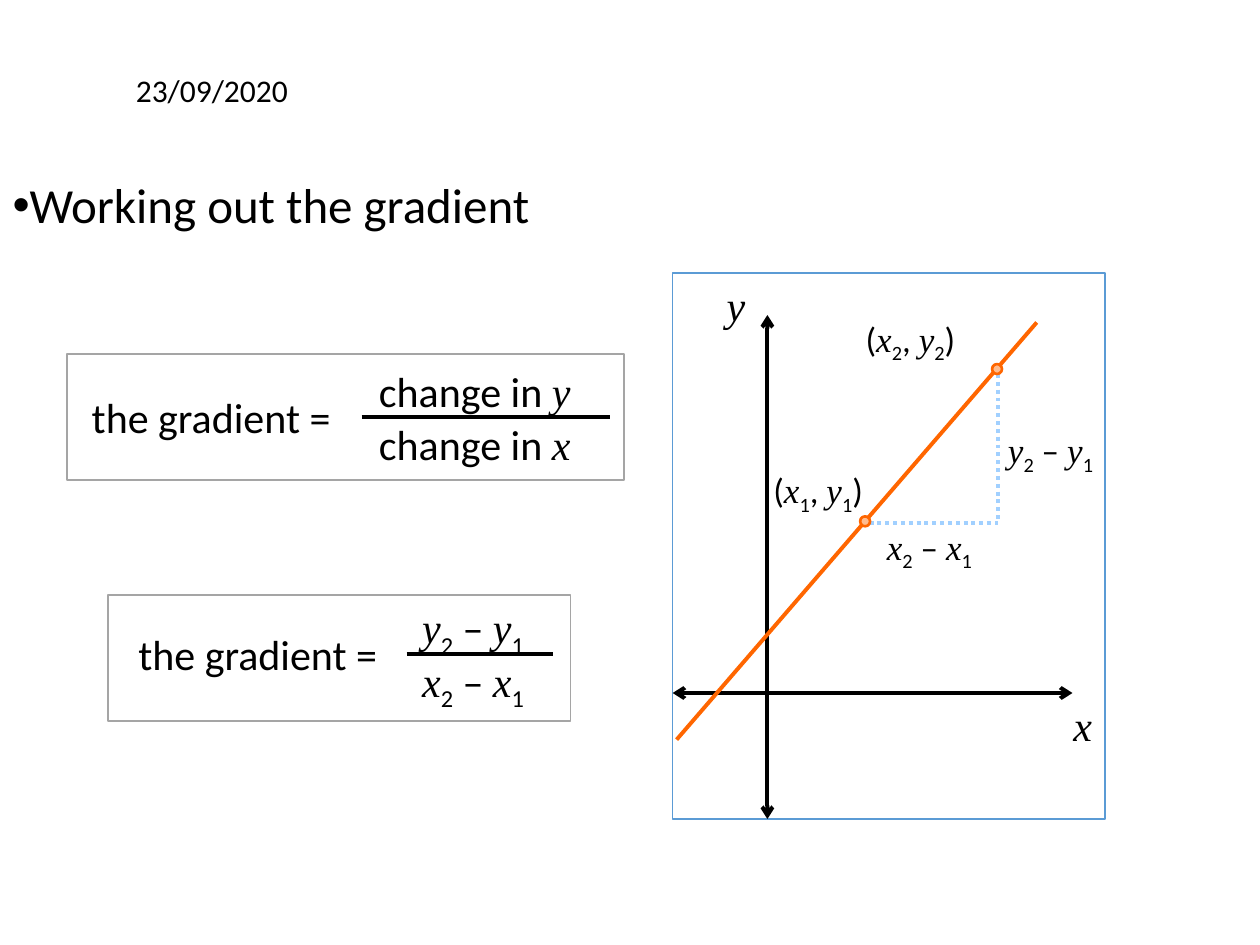
from typing import NamedTuple

from lxml import etree
from pptx import Presentation
from pptx import util as u
from pptx.dml.color import RGBColor
from pptx.enum import dml, shapes, text
from pptx.oxml.ns import qn

SANS, SERIF = "Calibri", "Times New Roman"
BLACK, WHITE, GREY = "000000", "FFFFFF", "A5A5A5"
BLUE, SKY, ORANGE, PEACH = "5B9BD5", "A1D0FF", "FF6600", "FFBC8F"


class Run(NamedTuple):
    words: str
    kind: str = "plain"  # plain, var or sub


class Box(NamedTuple):
    left: float
    top: float
    width: float
    height: float


class Label(NamedTuple):
    box: Box
    runs: list[Run]
    size: float


class Line(NamedTuple):
    x1: float
    y1: float
    x2: float
    y2: float
    color: str = BLACK
    arrows: bool = False
    dotted: bool = False


class Card(NamedTuple):
    frame: Box
    intro: Box
    above: Box
    below: Box
    upper: list[Run]
    lower: list[Run]
    bar: Line


class Point(NamedTuple):
    label: Box
    index: str
    dot: Box


def rgb(code: str) -> RGBColor:
    return RGBColor.from_string(code)


def var(name: str) -> Run:
    return Run(name, "var")


def term(name: str, index: str) -> list[Run]:
    return [var(name), Run(index, "sub")]


def diff(name: str) -> list[Run]:
    return term(name, "2") + [Run(" – ")] + term(name, "1")


def pair(index: str) -> list[Run]:
    return [Run("("), *term("x", index), Run(", "), *term("y", index), Run(")")]


def write(para, runs: list[Run], size: float) -> None:
    for item in runs:
        run = para.add_run()
        run.text = item.words
        font = run.font
        font.size = u.Pt(size)
        font.name = SERIF if item.kind == "var" else SANS
        font.italic = item.kind == "var"
        font.color.rgb = rgb(BLACK)
        if item.kind == "sub":
            run._r.get_or_add_rPr().set("baseline", "-25000")


def add_label(slide, label: Label) -> None:
    frame = slide.shapes.add_textbox(*map(u.Cm, label.box)).text_frame
    frame.word_wrap = False
    frame.auto_size = text.MSO_AUTO_SIZE.SHAPE_TO_FIT_TEXT
    write(frame.paragraphs[0], label.runs, label.size)


def add_shape(slide, box: Box, fill: str, line: str, width: float = 1,
              form=shapes.MSO_SHAPE.RECTANGLE) -> None:
    shape = slide.shapes.add_shape(form, *map(u.Cm, box))
    shape.shadow.inherit = False
    shape.fill.solid()
    shape.fill.fore_color.rgb = rgb(fill)
    shape.line.color.rgb = rgb(line)
    shape.line.width = u.Pt(width)


def add_line(slide, line: Line) -> None:
    ends = map(u.Cm, (line.x1, line.y1, line.x2, line.y2))
    link = slide.shapes.add_connector(shapes.MSO_CONNECTOR.STRAIGHT, *ends)
    link.line.color.rgb = rgb(line.color)
    link.line.width = u.Pt(2.25)
    if line.dotted:
        link.line.dash_style = dml.MSO_LINE.ROUND_DOT
    if line.arrows:
        for end in ("headEnd", "tailEnd"):
            etree.SubElement(link.line._ln, qn(f"a:{end}"), type="arrow")
    etree.SubElement(link._element.spPr, qn("a:effectLst"))


def add_card(slide, card: Card) -> None:
    add_shape(slide, card.frame, WHITE, GREY)
    add_label(slide, Label(card.intro, [Run("the gradient =")], 24))
    add_label(slide, Label(card.above, card.upper, 24))
    add_line(slide, card.bar)
    add_label(slide, Label(card.below, card.lower, 24))


def add_point(slide, point: Point) -> None:
    add_label(slide, Label(point.label, pair(point.index), 20))
    add_shape(slide, point.dot, PEACH, ORANGE, 1.5, shapes.MSO_SHAPE.OVAL)


def add_body(slide) -> None:
    body = slide.placeholders[1]
    body.left, body.top, body.width, body.height = map(
        u.Cm, (0, 3.53, 25.4, 15.52))
    para = body.text_frame.paragraphs[0]
    props = para._p.get_or_add_pPr()
    props.set("marL", "0")
    props.set("indent", "0")
    etree.SubElement(props, qn("a:buFont"), typeface="Arial")
    etree.SubElement(props, qn("a:buChar"), char="•")
    para.line_spacing = 0.9
    para.space_before = u.Pt(0)
    write(para, [Run("Working out the gradient")], 28)


CARDS = [
    Card(Box(1.35, 7.14, 11.23, 2.54), Box(1.6, 7.77, 5.38, 1.3),
         Box(7.39, 7.24, 4.42, 1.3), Box(7.39, 8.31, 4.42, 1.3),
         [Run("change in "), var("y")], [Run("change in "), var("x")],
         Line(7.29, 8.41, 12.29, 8.41)),
    Card(Box(2.18, 11.99, 9.32, 2.54), Box(2.54, 12.55, 5.38, 1.3),
         Box(8.26, 12.01, 2.67, 1.3), Box(8.26, 13.08, 2.67, 1.3),
         diff("y"), diff("x"), Line(8.2, 13.18, 11.15, 13.18)),
]
LINES = [
    Line(15.47, 16.51, 15.47, 6.35, arrows=True),
    Line(13.56, 13.97, 21.62, 13.97, arrows=True),
    Line(13.64, 14.91, 20.9, 6.5, ORANGE),
    Line(17.53, 10.54, 20.12, 10.54, SKY, dotted=True),
    Line(20.12, 7.54, 20.12, 10.54, SKY, dotted=True),
]
LABELS = [
    Label(Box(21.39, 13.97, 0.89, 1.27), [var("x")], 24),
    Label(Box(14.4, 5.51, 0.89, 1.27), [var("y")], 24),
    Label(Box(17.63, 10.46, 2.31, 1.12), diff("x"), 20),
    Label(Box(20.07, 8.51, 2.31, 1.12), diff("y"), 20),
]
POINTS = [
    Point(Box(15.34, 9.32, 2.39, 1.12), "1", Box(17.34, 10.41, 0.2, 0.2)),
    Point(Box(17.2, 6.27, 2.39, 1.12), "2", Box(20, 7.34, 0.2, 0.2)),
]


def main() -> None:
    deck = Presentation()
    deck.slide_width, deck.slide_height = u.Cm(25.4), u.Cm(19.05)
    slide = deck.slides.add_slide(deck.slide_layouts[1])

    # Date and heading; the title stays unused
    title = slide.shapes.title._element
    title.getparent().remove(title)
    add_body(slide)
    add_label(slide, Label(Box(2.49, 1.3, 3.61, 1.02), [Run("23/09/2020")], 18))

    # Formula cards
    for card in CARDS:
        add_card(slide, card)

    # Graph
    add_shape(slide, Box(13.56, 5.51, 8.71, 11), WHITE, BLUE)
    for line in LINES:
        add_line(slide, line)
    for label in LABELS:
        add_label(slide, label)
    for point in POINTS:
        add_point(slide, point)

    deck.save("out.pptx")


if __name__ == "__main__":
    main()
